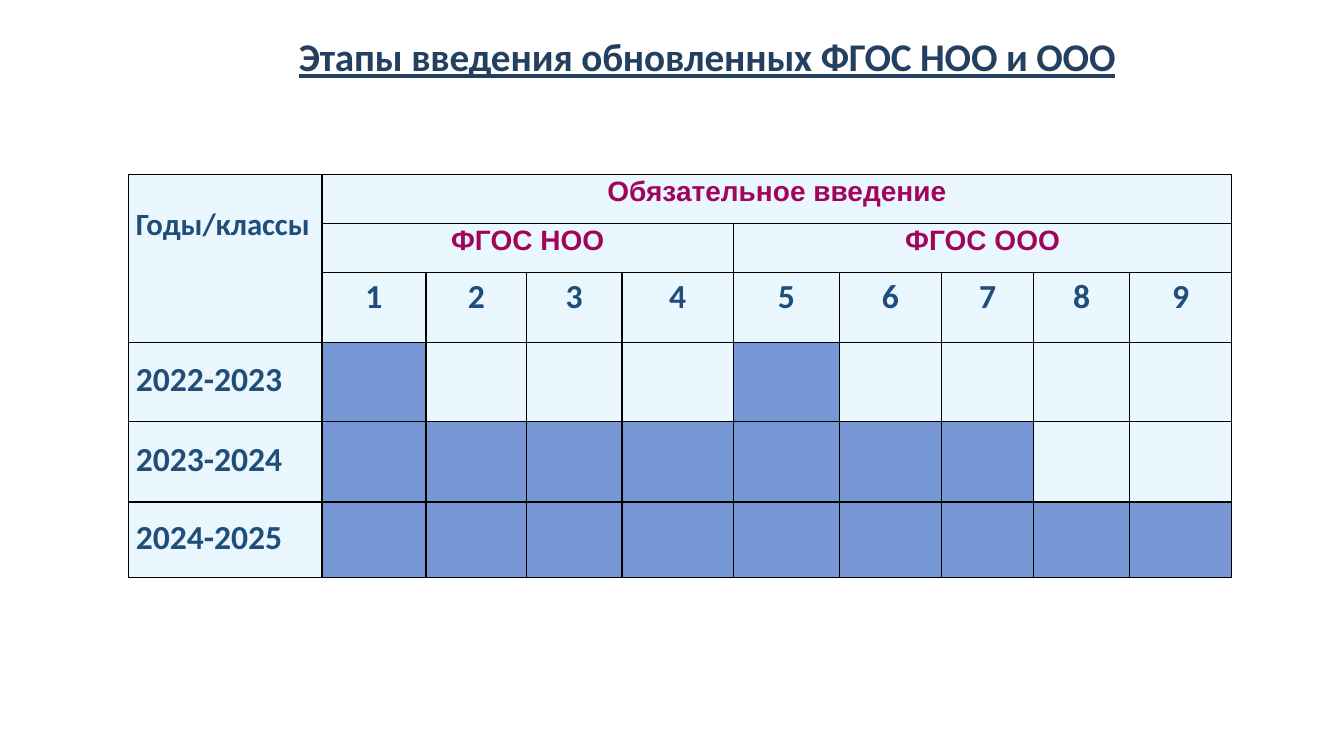
from lxml import etree
from pptx import Presentation
from pptx.dml.color import RGBColor
from pptx.enum import text
from pptx.oxml import ns
from pptx.util import Pt

TITLE_BLUE = RGBColor(0x24, 0x40, 0x60)
LABEL_BLUE = RGBColor(0x1F, 0x4E, 0x79)
HEADING_RED = RGBColor(0xA1, 0x05, 0x5B)
PALE = RGBColor(0xEB, 0xF7, 0xFF)
INTRODUCED = RGBColor(0x76, 0x97, 0xD3)
BORDER = RGBColor(0, 0, 0)

COLUMN_WIDTHS = [138, 74.3, 71.8, 68.2, 79.6, 75.7, 72.9, 66.1, 68.2, 73.2]
ROW_HEIGHTS = [35, 35.3, 50, 56.4, 57.4, 54]
HEADER_ROWS = 3
CLASSES = range(1, 10)
YEARS = {
    "2022-2023": [1, 5],
    "2023-2024": range(1, 8),
    "2024-2025": CLASSES,
}


def style_font(paragraph, name, size, color):
    font = paragraph.font
    font.name, font.size, font.bold = name, Pt(size), True
    font.color.rgb = color


def add_title(slide, wording):
    title = slide.shapes.title
    title.left, title.top, title.width, title.height = Pt(213.5), Pt(22.3), Pt(593), Pt(35.3)
    frame = title.text_frame
    frame.text = wording
    frame.margin_left = frame.margin_right = frame.margin_bottom = 0
    frame.margin_top = Pt(1)
    frame.vertical_anchor = text.MSO_ANCHOR.TOP
    frame.auto_size = text.MSO_AUTO_SIZE.NONE
    paragraph = frame.paragraphs[0]
    paragraph.alignment = text.PP_ALIGN.LEFT
    paragraph.space_before = Pt(0.9)
    style_font(paragraph, "Calibri", 28, TITLE_BLUE)
    paragraph.font.underline = True
    # Slightly tightened letters keep the heading on one line
    paragraph.runs[0].font._element.set("spc", "-10")


def add_borders(cell):
    properties = cell._tc.get_or_add_tcPr()
    for position, side in enumerate("LRTB"):
        line = etree.Element(ns.qn(f"a:ln{side}"), w=str(Pt(1)))
        fill = etree.SubElement(line, ns.qn("a:solidFill"))
        etree.SubElement(fill, ns.qn("a:srgbClr"), val=str(BORDER))
        properties.insert(position, line)


def format_cell(cell, color):
    cell.margin_left = cell.margin_right = cell.margin_top = cell.margin_bottom = 0
    cell.fill.solid()
    cell.fill.fore_color.rgb = color
    add_borders(cell)


def write_heading(cell, wording):
    cell.text = wording
    paragraph = cell.text_frame.paragraphs[0]
    paragraph.alignment = text.PP_ALIGN.CENTER
    paragraph.line_spacing = Pt(23.5)
    style_font(paragraph, "Arial", 20, HEADING_RED)


def write_label(cell, wording, size=24, top=0, left=5):
    cell.text = wording
    cell.margin_top, cell.margin_left = Pt(top), Pt(left)
    style_font(cell.text_frame.paragraphs[0], "Calibri", size, LABEL_BLUE)


def add_table(slide):
    frame = slide.shapes.add_table(
        len(ROW_HEIGHTS), len(COLUMN_WIDTHS), Pt(92), Pt(124.6),
        Pt(sum(COLUMN_WIDTHS)), Pt(sum(ROW_HEIGHTS)))
    table = frame.table
    table.first_row = table.horz_banding = False
    for column, width in zip(table.columns, COLUMN_WIDTHS):
        column.width = Pt(width)
    for row, height in zip(table.rows, ROW_HEIGHTS):
        row.height = Pt(height)
        for cell in row.cells:
            format_cell(cell, PALE)
    return table


def fill_header(table):
    spans = [((0, 0), (2, 0)), ((0, 1), (0, 9)), ((1, 1), (1, 4)), ((1, 5), (1, 9))]
    for first, last in spans:
        table.cell(*first).merge(table.cell(*last))
    write_label(table.cell(0, 0), "Годы/классы", size=22, top=22.5)
    write_heading(table.cell(0, 1), "Обязательное введение")
    write_heading(table.cell(1, 1), "ФГОС НОО")
    write_heading(table.cell(1, 5), "ФГОС ООО")
    for number in CLASSES:
        cell = table.cell(2, number)
        write_label(cell, str(number), top=3, left=0)
        cell.text_frame.paragraphs[0].alignment = text.PP_ALIGN.CENTER


def fill_years(table):
    for row, (year, classes) in enumerate(YEARS.items(), HEADER_ROWS):
        label = table.cell(row, 0)
        write_label(label, year)
        label.vertical_anchor = text.MSO_ANCHOR.MIDDLE
        label.margin_bottom = Pt(2.5)
        for number in classes:
            table.cell(row, number).fill.fore_color.rgb = INTRODUCED


def main():
    presentation = Presentation()
    presentation.slide_width, presentation.slide_height = Pt(960), Pt(540)
    slide = presentation.slides.add_slide(presentation.slide_layouts[5])
    add_title(slide, "Этапы введения обновленных ФГОС НОО и ООО")
    table = add_table(slide)
    fill_header(table)
    fill_years(table)
    presentation.save("out.pptx")


if __name__ == "__main__":
    main()
